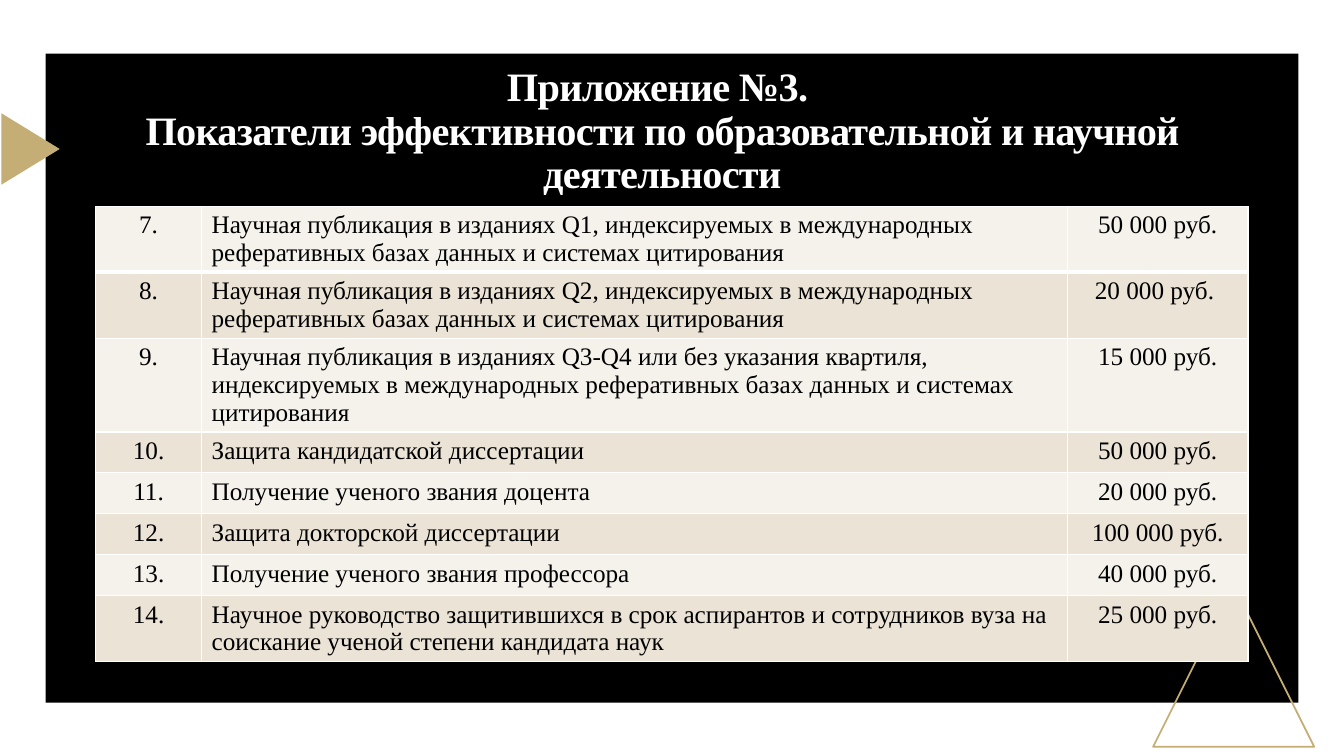
from lxml import etree
from pptx import Presentation
from pptx.dml.color import RGBColor
from pptx.enum.shapes import MSO_SHAPE
from pptx.enum.text import MSO_ANCHOR, MSO_AUTO_SIZE, PP_ALIGN
from pptx.oxml.ns import qn
from pptx.util import Cm, Pt

RECT, TRI = MSO_SHAPE.RECTANGLE, MSO_SHAPE.ISOSCELES_TRIANGLE
LEFT, MID = PP_ALIGN.LEFT, PP_ALIGN.CENTER
ANCHOR, NO_FIT = MSO_ANCHOR.MIDDLE, MSO_AUTO_SIZE.NONE

# Content
TITLE = ("Приложение №3. \v"
         "Показатели эффективности по образовательной и научной деятельности")
BASE = "реферативных базах данных и системах цитирования"
FIRST = 7
ROWS = [
    (f"Научная публикация в изданиях Q1, индексируемых в международных {BASE}",
     "50 000 руб."),
    (f"Научная публикация в изданиях Q2, индексируемых в международных {BASE}",
     "20 000 руб. "),
    ("Научная публикация в изданиях Q3-Q4 или без указания квартиля, "
     f"индексируемых в международных {BASE}", "15 000 руб."),
    ("Защита кандидатской диссертации", "50 000 руб."),
    ("Получение ученого звания доцента", "20 000 руб."),
    ("Защита докторской диссертации", "100 000 руб."),
    ("Получение ученого звания профессора", "40 000 руб."),
    ("Научное руководство защитившихся в срок аспирантов и сотрудников вуза "
     "на соискание ученой степени кандидата наук", "25 000 руб."),
]

# Look
FONT = "Times New Roman"
HEX = {"black": "000000", "white": "FFFFFF", "gold": "C4AE75",
       "light": "F5F2EC", "dark": "EAE3D6"}
HEAD = {"name": FONT, "size": Pt(28.8), "bold": True}
BODY = {"name": FONT, "size": Pt(18), "bold": False}
COLS = [(2.67, MID), (21.82, LEFT), (4.55, MID)]
ROW_H = 1.03

# Kind, box in cm, turn, fill, line
SHAPES = [
    (RECT, (1.15, 1.35, 31.57, 16.36), 0, "black", None),
    (TRI, (29.06, 14.76, 4.06, 4.06), 0, None, "gold"),
    (TRI, (-0.13, 3.02, 1.8, 1.47), 90, "gold", None),
]


def color(name):
    return RGBColor.from_string(HEX[name])


def style(font, look, tint):
    for key, value in look.items():
        setattr(font, key, value)
    font.color.rgb = color(tint)


def border(cell, side, width):
    props = cell._tc.get_or_add_tcPr()
    line = etree.SubElement(props, qn(f"a:{side}"), w=str(Pt(width)))
    fill = etree.SubElement(line, qn("a:solidFill"))
    etree.SubElement(fill, qn("a:srgbClr"), val=HEX["white"])


deck = Presentation()
deck.slide_width, deck.slide_height = Cm(33.87), Cm(19.05)
slide = deck.slides.add_slide(deck.slide_layouts[5])

# Panel and triangles
for kind, box, turn, fill, edge in SHAPES:
    shape = slide.shapes.add_shape(kind, *map(Cm, box))
    shape.shadow.inherit = False
    shape.rotation = turn
    if fill:
        shape.fill.solid()
        shape.fill.fore_color.rgb = color(fill)
    else:
        shape.fill.background()
    if edge:
        shape.line.color.rgb = color(edge)
        shape.line.width = Pt(1.25)
    else:
        shape.line.fill.background()

# Title, brought in front of the panel
title = slide.shapes.title
slide.shapes._spTree.append(title._element)
title.left, title.top, title.width, title.height = map(
    Cm, (0.69, 1.87, 32, 2.92))
frame = title.text_frame
frame.text = TITLE
frame.word_wrap = True
frame.auto_size = NO_FIT
frame.vertical_anchor = ANCHOR
para = frame.paragraphs[0]
para.alignment, para.line_spacing = MID, 0.9
for run in para.runs:
    style(run.font, HEAD, "white")
    run._r.get_or_add_rPr().set("spc", "-50")

# Table
wide = sum(width for width, _ in COLS)
table = slide.shapes.add_table(
    len(ROWS), len(COLS), Cm(2.41), Cm(5.2),
    Cm(wide), Cm(ROW_H * len(ROWS))).table
table.first_row = False
for col, (width, _) in zip(table.columns, COLS):
    col.width = Cm(width)
for r, row in enumerate(ROWS):
    table.rows[r].height = Cm(ROW_H)
    for c, text in enumerate((f"{FIRST + r}.", *row)):
        cell = table.cell(r, c)
        cell.text = text
        para = cell.text_frame.paragraphs[0]
        para.alignment = COLS[c][1]
        style(para.runs[0].font, BODY, "black")
        sides = {"lnL": 1, "lnR": 1, "lnT": 3 if r == 1 else 1,
                 "lnB": 3 if r == 0 else 1}
        for side, width in sides.items():
            border(cell, side, width)
        cell.fill.solid()
        cell.fill.fore_color.rgb = color("dark" if r % 2 else "light")

deck.save("out.pptx")
